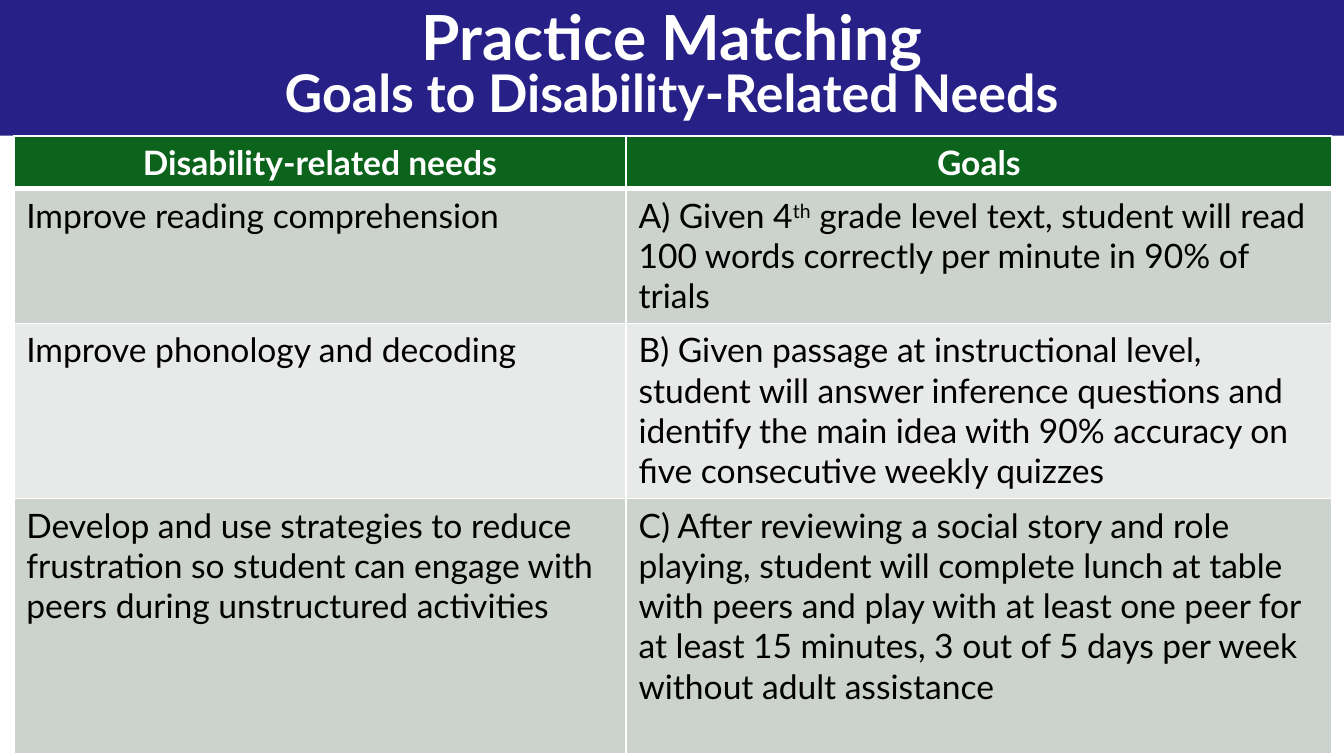
import pptx
import pptx.dml.color
import pptx.enum.shapes
import pptx.enum.text
import pptx.oxml
import pptx.oxml.ns
import pptx.util

Pt = pptx.util.Pt
ALIGN = pptx.enum.text.PP_ALIGN
ANCHOR = pptx.enum.text.MSO_ANCHOR
COLORS = {
    "banner": "262087",
    "header": "0C631B",
    "odd": "CCD3CD",
    "even": "E7EAE8",
    "white": "FFFFFF",
    "black": "000000",
}
TITLE = [("Practice Matching", 33.3), ("Goals to Disability-Related Needs", 27.8)]
HEADINGS = ["Disability-related needs", "Goals"]
MATCHES = [
    (
        ["Improve reading comprehension"],
        [
            "A) Given 4",
            ("th", 30000),
            " grade level text, student will read 100 words correctly per minute in 90% of trials",
        ],
    ),
    (
        ["Improve phonology and decoding"],
        [
            "B) Given passage at instructional level, student will answer inference questions "
            "and identify the main idea with 90% accuracy on five consecutive weekly quizzes"
        ],
    ),
    (
        [
            "Develop and use strategies to reduce frustration so student can engage with peers "
            "during unstructured activities"
        ],
        [
            "C) After reviewing a social story and role playing, student will complete lunch at "
            "table with peers and play with at least one peer for at least 15 minutes, 3 out of "
            "5 days per week without adult assistance"
        ],
    ),
]
COLUMN_WIDTHS = [328, 378]
ROW_HEIGHTS = [28.3, 72.2, 93.8, 136.5]


class SlideBuilder:
    """Hold the deck style and draw elements on the current slide."""

    font = "Lato"
    body_size = 18

    def __init__(self, slide):
        self.slide = slide

    def color(self, key):
        return pptx.dml.color.RGBColor.from_string(COLORS[key])

    def paint(self, fill, key):
        fill.solid()
        fill.fore_color.rgb = self.color(key)

    def run(self, paragraph, text, size, key, bold, baseline=0):
        run = paragraph.add_run()
        run.text = text
        run.font.name = self.font
        run.font.size = Pt(size)
        run.font.bold = bold
        run.font.color.rgb = self.color(key)
        if baseline:
            run.font._element.set("baseline", str(baseline))

    def banner(self, left, top, width, height):
        banner = self.slide.shapes.add_shape(
            pptx.enum.shapes.MSO_SHAPE.RECTANGLE, Pt(left), Pt(top), Pt(width), Pt(height)
        )
        banner.shadow.inherit = False
        self.paint(banner.fill, "banner")
        banner.line.fill.background()

    def title(self, lines, left, top, width, height):
        box = self.slide.shapes.add_textbox(Pt(left), Pt(top), Pt(width), Pt(height))
        frame = box.text_frame
        frame.word_wrap = True
        frame.vertical_anchor = ANCHOR.MIDDLE
        for index, (text, size) in enumerate(lines):
            paragraph = frame.add_paragraph() if index else frame.paragraphs[0]
            paragraph.alignment = ALIGN.CENTER
            paragraph.line_spacing = 0.8
            self.run(paragraph, text, size, "white", True)

    def borders(self, cell, top, bottom):
        properties = cell._tc.get_or_add_tcPr()
        sides = [("lnL", 1), ("lnR", 1), ("lnT", top), ("lnB", bottom)]
        for index, (side, width) in enumerate(sides):
            line = pptx.oxml.parse_xml(
                f'<a:{side} {pptx.oxml.ns.nsdecls("a")} w="{Pt(width)}"><a:solidFill>'
                f'<a:srgbClr val="{COLORS["white"]}"/></a:solidFill></a:{side}>'
            )
            properties.insert(index, line)

    def cell(self, cell, pieces, row):
        is_header = row == 0
        cell.margin_left = cell.margin_right = Pt(6.7)
        cell.margin_top = cell.margin_bottom = Pt(3.35)
        self.paint(cell.fill, "header" if is_header else "odd" if row % 2 else "even")
        self.borders(cell, 3 if row == 1 else 1, 3 if is_header else 1)
        paragraph = cell.text_frame.paragraphs[0]
        paragraph.alignment = ALIGN.CENTER if is_header else ALIGN.LEFT
        for piece in pieces:
            text, baseline = (piece, 0) if isinstance(piece, str) else piece
            self.run(
                paragraph, text, self.body_size,
                "white" if is_header else "black", is_header, baseline,
            )

    def table(self, rows, left, top, widths, heights):
        table = self.slide.shapes.add_table(
            len(rows), len(widths), Pt(left), Pt(top), Pt(sum(widths)), Pt(sum(heights))
        ).table
        for column, width in zip(table.columns, widths):
            column.width = Pt(width)
        for row, (contents, height) in enumerate(zip(rows, heights)):
            table.rows[row].height = Pt(height)
            for column, pieces in enumerate(contents):
                self.cell(table.cell(row, column), pieces, row)


def main():
    deck = pptx.Presentation()
    deck.slide_width, deck.slide_height = Pt(720), Pt(405)
    builder = SlideBuilder(deck.slides.add_slide(deck.slide_layouts[6]))
    builder.banner(-0.5, 0, 720.5, 72.7)
    builder.title(TITLE, 0, 0, 720, 72.7)
    header = [[heading] for heading in HEADINGS]
    builder.table([header, *MATCHES], 7.4, 72.8, COLUMN_WIDTHS, ROW_HEIGHTS)
    deck.save("out.pptx")


if __name__ == "__main__":
    main()
